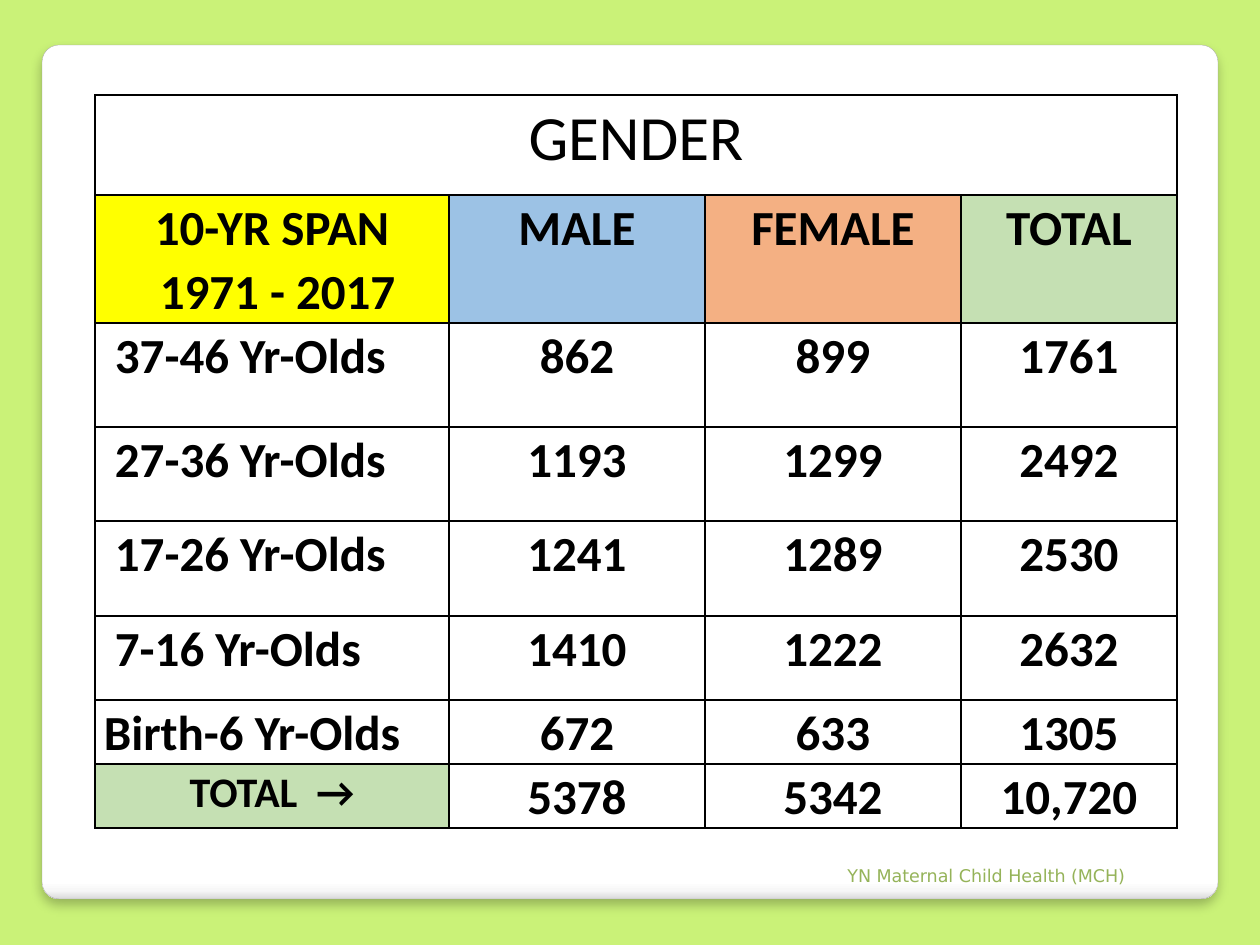
from dataclasses import dataclass
from typing import Optional

import lxml.etree
import pptx
import pptx.dml.color
import pptx.enum.shapes
import pptx.enum.text
import pptx.oxml
import pptx.oxml.ns
import pptx.util

RGBColor = pptx.dml.color.RGBColor
PP_ALIGN = pptx.enum.text.PP_ALIGN

EMU_PER_PX = 914400 / 126
LIME = RGBColor(0xCA, 0xF2, 0x78)
EDGE = RGBColor(0xA4, 0xA4, 0xA4)
OLIVE = RGBColor(0x95, 0xB3, 0x59)
BLACK = RGBColor(0, 0, 0)
YELLOW = RGBColor(0xFF, 0xFF, 0)
BLUE = RGBColor(0x9C, 0xC2, 0xE5)
ORANGE = RGBColor(0xF4, 0xB0, 0x83)
GREEN = RGBColor(0xC5, 0xE0, 0xB3)
WHITE = RGBColor(0xFF, 0xFF, 0xFF)
PALE = RGBColor(0xF7, 0xF7, 0xF7)
GRAY = RGBColor(0xDA, 0xDA, 0xDA)
CARD_STOPS = [(0, WHITE), (98, WHITE), (99, PALE), (100, GRAY)]

COL_WIDTHS = [354, 256, 256, 216]
ROW_HEIGHTS = [100, 128, 104, 94, 95, 84, 64, 64]
INDENT = 11


@dataclass(frozen=True)
class Line:
    text: str
    indent: int = 0


@dataclass(frozen=True)
class CellSpec:
    lines: tuple[Line, ...]
    fill: Optional[RGBColor] = None
    size: int = 28
    bold: bool = True
    align: PP_ALIGN = PP_ALIGN.CENTER


def px(n: int) -> pptx.util.Emu:
    return pptx.util.Emu(round(n * EMU_PER_PX))


def centered(text: str, fill: Optional[RGBColor] = None, size: int = 28) -> CellSpec:
    return CellSpec((Line(text),), fill, size)


def age_group(text: str, indent: int = INDENT) -> CellSpec:
    return CellSpec((Line(text, indent),), align=PP_ALIGN.LEFT)


ROWS = [
    [CellSpec((Line("GENDER"),), size=36, bold=False)],
    [CellSpec((Line("10-YR SPAN"), Line("1971 - 2017", INDENT)), YELLOW),
     centered("MALE", BLUE), centered("FEMALE", ORANGE), centered("TOTAL", GREEN)],
] + [
    [label] + [centered(v) for v in values]
    for label, values in [
        (age_group("37-46 Yr-Olds"), ("862", "899", "1761")),
        (age_group("27-36 Yr-Olds"), ("1193", "1299", "2492")),
        (age_group("17-26 Yr-Olds"), ("1241", "1289", "2530")),
        (age_group("7-16 Yr-Olds"), ("1410", "1222", "2632")),
        (age_group("Birth-6 Yr-Olds", 0), ("672", "633", "1305")),
        (centered("TOTAL  →", GREEN, 24), ("5378", "5342", "10,720")),
    ]
]


def add_run(p, text: str, font: str, size: int, color: RGBColor, bold: bool = False) -> None:
    r = p.add_run()
    r.text = text
    r.font.name = font
    r.font.size = pptx.util.Pt(size)
    r.font.bold = bold
    r.font.color.rgb = color


def draw_card(s) -> None:
    sp = s.shapes.add_shape(pptx.enum.shapes.MSO_SHAPE.ROUNDED_RECTANGLE,
                            px(42), px(45), px(1176), px(854))
    sp.adjustments[0] = 0.02
    sp.line.color.rgb = EDGE
    sp.line.width = pptx.util.Pt(0.16)
    sp.shadow.inherit = False
    sp.fill.gradient()
    sp.fill.gradient_angle = 270
    stops = sp.element.spPr.find(".//" + pptx.oxml.ns.qn("a:gsLst"))
    for old in list(stops):
        stops.remove(old)
    for pos, color in CARD_STOPS:
        gs = lxml.etree.SubElement(stops, pptx.oxml.ns.qn("a:gs"), pos=str(pos * 1000))
        lxml.etree.SubElement(gs, pptx.oxml.ns.qn("a:srgbClr"), val=str(color))
    effects = sp.element.spPr.find(pptx.oxml.ns.qn("a:effectLst"))
    effects.append(pptx.oxml.parse_xml(
        f'<a:outerShdw {pptx.oxml.ns.nsdecls("a")} blurRad="{pptx.util.Pt(6)}" '
        f'dist="{pptx.util.Pt(4)}" dir="5400000" algn="t" rotWithShape="0">'
        f'<a:srgbClr val="{BLACK}"><a:alpha val="25000"/></a:srgbClr></a:outerShdw>'))


def draw_footer(s) -> None:
    tf = s.shapes.add_textbox(px(835), px(842), px(315), px(50)).text_frame
    tf.word_wrap = True
    tf.vertical_anchor = pptx.enum.text.MSO_ANCHOR.BOTTOM
    add_run(tf.paragraphs[0], "YN Maternal Child Health (MCH)", "DejaVu Sans", 10, OLIVE)


def set_borders(cell) -> None:
    tc_pr = cell._tc.get_or_add_tcPr()
    for i, side in enumerate(("lnL", "lnR", "lnT", "lnB")):
        tc_pr.insert(i, pptx.oxml.parse_xml(
            f'<a:{side} {pptx.oxml.ns.nsdecls("a")} w="{pptx.util.Pt(1)}"><a:solidFill>'
            f'<a:srgbClr val="{BLACK}"/></a:solidFill></a:{side}>'))


def fill_cell(cell, spec: CellSpec) -> None:
    cell.margin_left = cell.margin_right = px(9)
    cell.margin_top = cell.margin_bottom = 0
    if spec.fill is None:
        cell.fill.background()
    else:
        cell.fill.solid()
        cell.fill.fore_color.rgb = spec.fill
    tf = cell.text_frame
    for i, line in enumerate(spec.lines):
        p = tf.add_paragraph() if i else tf.paragraphs[0]
        p.alignment = spec.align
        p.line_spacing = 1.07
        if line.indent:
            p._p.get_or_add_pPr().set("marL", str(px(line.indent)))
        add_run(p, line.text, "Calibri", spec.size, BLACK, spec.bold)


def draw_table(s) -> None:
    table = s.shapes.add_table(len(ROW_HEIGHTS), len(COL_WIDTHS), px(95), px(95),
                               px(sum(COL_WIDTHS)), px(sum(ROW_HEIGHTS))).table
    table.first_row = False
    table.horz_banding = False
    for col, width in zip(table.columns, COL_WIDTHS):
        col.width = px(width)
    for row, height in zip(table.rows, ROW_HEIGHTS):
        row.height = px(height)
    table.cell(0, 0).merge(table.cell(0, len(COL_WIDTHS) - 1))
    for row, specs in zip(table.rows, ROWS):
        for cell, spec in zip(row.cells, specs):
            fill_cell(cell, spec)
        for cell in row.cells:
            set_borders(cell)


def main() -> None:
    prs = pptx.Presentation()
    prs.slide_width, prs.slide_height = px(1260), px(945)
    s = prs.slides.add_slide(prs.slide_layouts[6])
    s.background.fill.solid()
    s.background.fill.fore_color.rgb = LIME
    draw_card(s)
    draw_footer(s)
    draw_table(s)
    prs.save("out.pptx")


if __name__ == "__main__":
    main()
